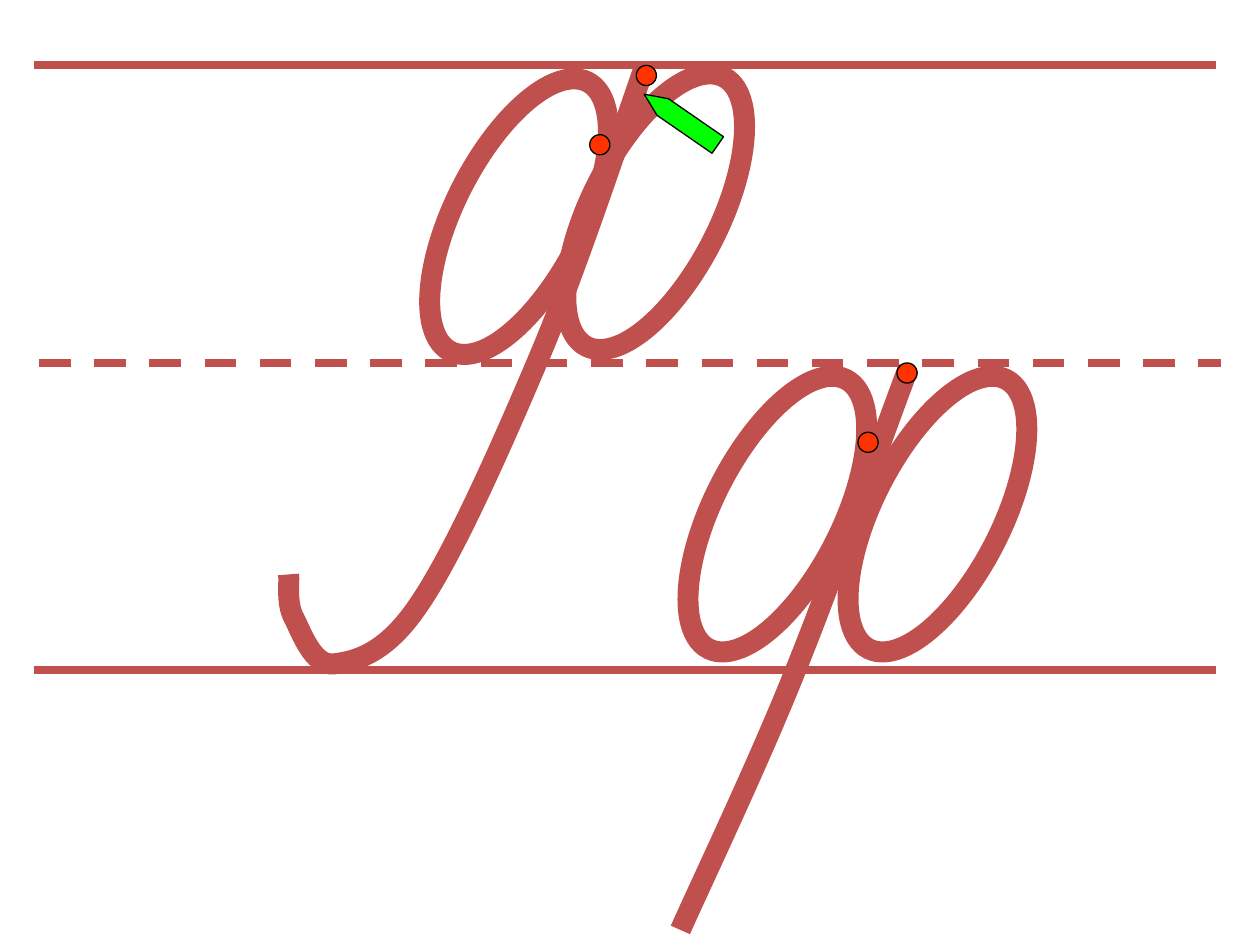
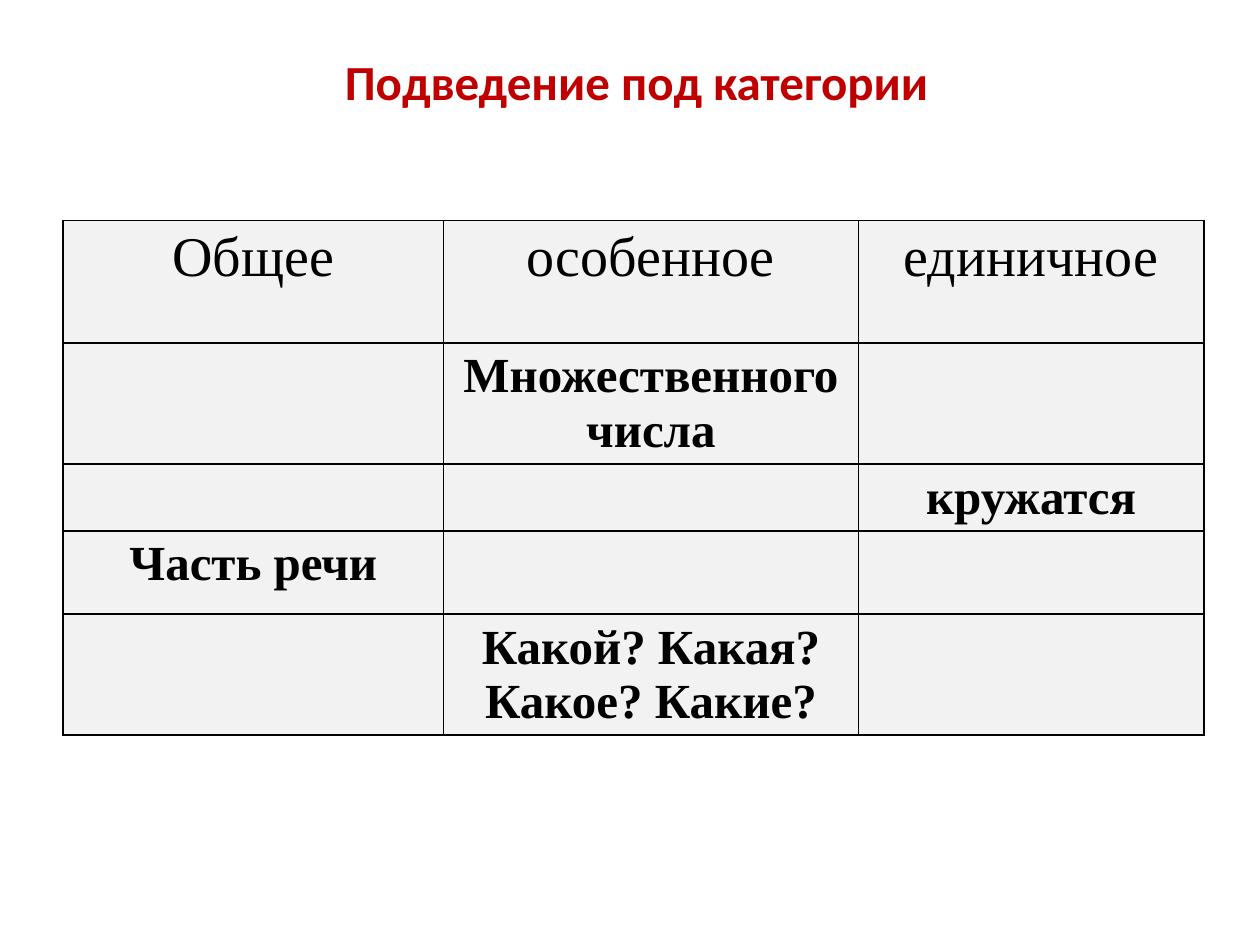
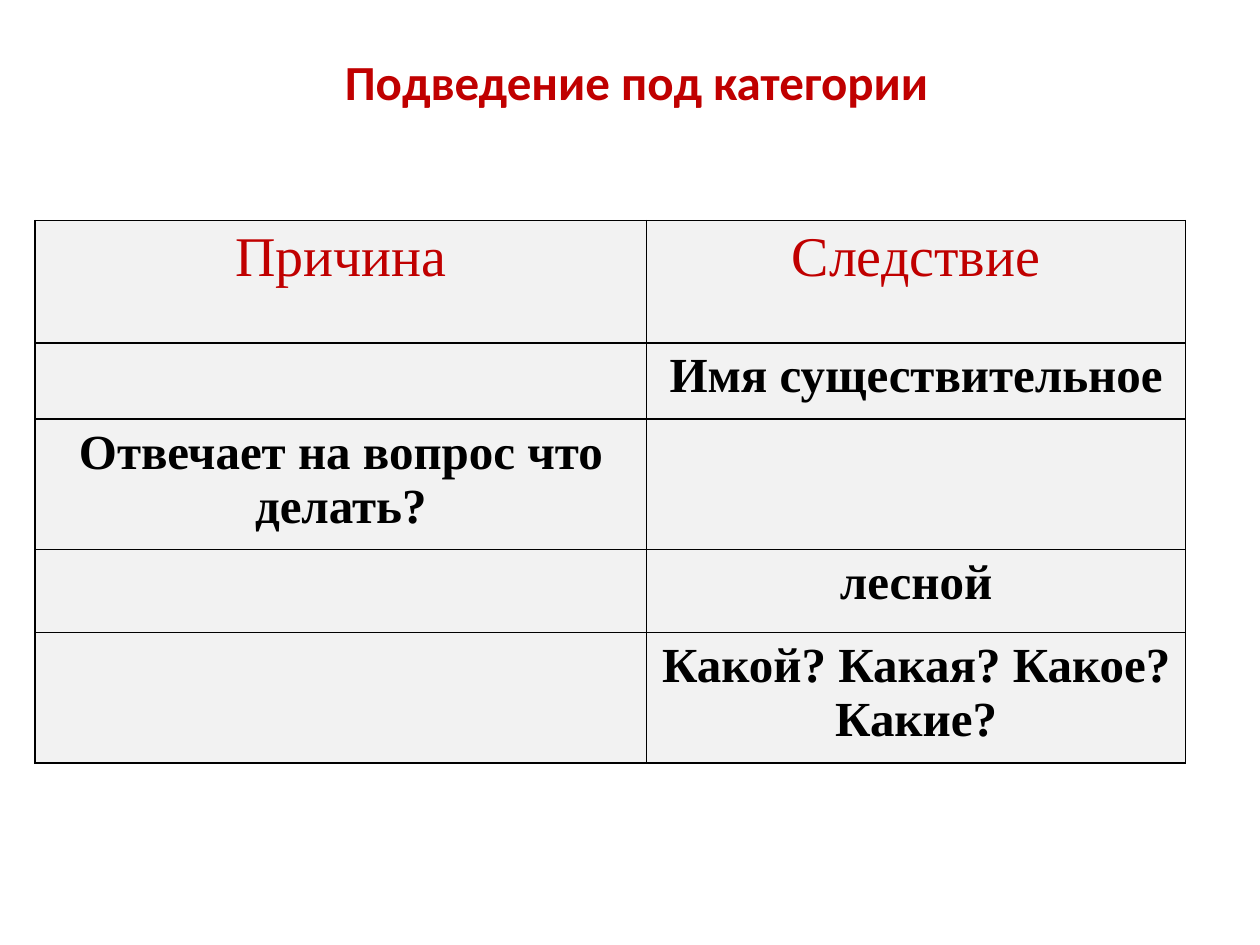
from dataclasses import dataclass

from lxml.etree import SubElement
from pptx import Presentation
from pptx.dml.color import RGBColor
from pptx.enum.dml import MSO_LINE
from pptx.enum.shapes import MSO_CONNECTOR, MSO_SHAPE
from pptx.enum.text import MSO_AUTO_SIZE, PP_ALIGN
from pptx.oxml.ns import qn
from pptx.util import Pt


@dataclass(frozen=True)
class Theme:
    ink: str = "C0504D"
    dot: str = "FF3300"
    pencil: str = "00FF00"
    black: str = "000000"
    accent: str = "C00000"
    cell: str = "F2F2F2"
    title_font: str = "Calibri"
    table_font: str = "Times New Roman"
    title_size: float = 28
    head_size: float = 32
    body_size: float = 28
    stroke: float = 12
    ruler: float = 4.5
    outline: float = 0.75
    border: float = 1


T = Theme()

# Content: handwriting slide, all lengths in points
RULERS = [(19.4, 37.4, False), (22.3, 207.4, True), (19.4, 383, False)]
RULER_LENGTH = 675.4
OVAL_SIZE, OVAL_TILT = (73.4, 172.8), 27
OVALS = [(499, 207.4), (407.5, 207.4), (259.9, 37.4), (337.7, 34.6)]
DOT_SIZE = 11.5
DOTS = [(363.6, 37.4), (337, 77), (512.6, 207.4), (490.3, 247)]
PENCIL = (363.6, 62.6, 51.1, 11.5)
PENCIL_TILT, PENCIL_TIP = 214.6, 1.124
# Each stem is a start point, then two control points and an end per curve
STEMS = [
    [(388.8, 531.4),
     (399.6, 506.9), (432.7, 437.8), (454.3, 383.8),
     (475.9, 330.5), (505.4, 246.2), (519.1, 210.2)],
    [(164.9, 328.3),
     (165.6, 332.6), (163.4, 344.2), (167.8, 352.8),
     (172.1, 360.7), (178.6, 380.9), (190.8, 379.4),
     (202.3, 378), (220.3, 374.4), (239.8, 344.9),
     (259.9, 315.4), (287.3, 253.4), (308.9, 202.3),
     (330.5, 151.2), (356.4, 72), (368.6, 37.4)],
]

# Content: table slides
TITLE = "Подведение под категории"
TITLE_BOX = (190, 26, 350, 41)
TABLE_TOP = 126
TABLES = [
    dict(left=36, cols=[217.5, 237, 197.5], heights=[70, 69, 38, 47.5, 69],
         head_color=T.black,
         rows=[["Общее", "особенное", "единичное"],
               ["", "Множественного числа", ""],
               ["", "", "кружатся"],
               ["Часть речи", "", ""],
               ["", "Какой? Какая? Какое? Какие?", ""]]),
    dict(left=20, cols=[349.5, 308], heights=[70, 43.5, 74.5, 47.5, 74.5],
         head_color=T.accent,
         rows=[["Причина", "Следствие"],
               ["", "Имя существительное"],
               ["Отвечает на вопрос что делать?", ""],
               ["", "лесной"],
               ["", "Какой? Какая? Какое? Какие?"]]),
]


def rgb(color):
    return RGBColor.from_string(color)


def pts(*values):
    return [Pt(v) for v in values]


def write(tf, text, *, font, size, color, bold=False, align=PP_ALIGN.LEFT):
    p = tf.paragraphs[0]
    p.alignment = align
    r = p.add_run()
    r.text = text
    r.font.name, r.font.size, r.font.bold = font, Pt(size), bold
    r.font.color.rgb = rgb(color)


def paint(sp, *, line, width, fill=None):
    sp.shadow.inherit = False
    if fill:
        sp.fill.solid()
        sp.fill.fore_color.rgb = rgb(fill)
    else:
        sp.fill.background()
    sp.line.color.rgb = rgb(line)
    sp.line.width = Pt(width)


def add_preset(s, kind, box, rotation=0, **look):
    sp = s.shapes.add_shape(kind, *pts(*box))
    sp.rotation = rotation
    paint(sp, **look)
    return sp


def add_rulers(s):
    group = s.shapes.add_group_shape()
    for x, y, dashed in RULERS:
        c = group.shapes.add_connector(
            MSO_CONNECTOR.STRAIGHT, *pts(x, y, x + RULER_LENGTH, y))
        c.line.color.rgb = rgb(T.ink)
        c.line.width = Pt(T.ruler)
        if dashed:
            c.line.dash_style = MSO_LINE.DASH
        SubElement(c._element.spPr, qn("a:effectLst"))


def add_stem(s, points):
    start, *rest = [pts(*point) for point in points]
    builder = s.shapes.build_freeform(*start)
    builder.add_line_segments(rest, close=False)
    sp = builder.convert_to_shape()
    paint(sp, line=T.ink, width=T.stroke)
    # Join every three line points into one cubic curve
    path = sp._element.find(".//" + qn("a:path"))
    segments = path.findall(qn("a:lnTo"))
    for i in range(0, len(segments), 3):
        curve = SubElement(path, qn("a:cubicBezTo"))
        for segment in segments[i:i + 3]:
            curve.append(segment[0])
            path.remove(segment)


def add_border(cell):
    tc_pr = cell._tc.get_or_add_tcPr()
    for side in ("lnL", "lnR", "lnT", "lnB"):
        ln = SubElement(tc_pr, qn("a:" + side), w=str(Pt(T.border)))
        fill = SubElement(ln, qn("a:solidFill"))
        SubElement(fill, qn("a:srgbClr"), val=T.black)


def add_grid(s, left, cols, heights, head_color, rows):
    frame = s.shapes.add_table(
        len(rows), len(cols), *pts(left, TABLE_TOP, sum(cols), sum(heights)))
    table = frame.table
    table.first_row = table.horz_banding = False
    for column, width in zip(table.columns, cols):
        column.width = Pt(width)
    for i, (row, height) in enumerate(zip(rows, heights)):
        table.rows[i].height = Pt(height)
        head = i == 0
        for j, text in enumerate(row):
            cell = table.cell(i, j)
            add_border(cell)
            cell.fill.solid()
            cell.fill.fore_color.rgb = rgb(T.cell)
            if text:
                write(cell.text_frame, text, font=T.table_font,
                      size=T.head_size if head else T.body_size,
                      color=head_color if head else T.black,
                      bold=not head, align=PP_ALIGN.CENTER)


def add_title(s):
    tf = s.shapes.add_textbox(*pts(*TITLE_BOX)).text_frame
    tf.word_wrap = False
    tf.auto_size = MSO_AUTO_SIZE.SHAPE_TO_FIT_TEXT
    write(tf, TITLE, font=T.title_font, size=T.title_size,
          color=T.accent, bold=True)


def add_handwriting(s):
    add_rulers(s)
    for points in STEMS:
        add_stem(s, points)
    for corner in OVALS:
        add_preset(s, MSO_SHAPE.OVAL, corner + OVAL_SIZE, OVAL_TILT,
                   line=T.ink, width=T.stroke)
    for corner in DOTS:
        add_preset(s, MSO_SHAPE.FLOWCHART_CONNECTOR,
                   corner + (DOT_SIZE, DOT_SIZE),
                   fill=T.dot, line=T.black, width=T.outline)
    pencil = add_preset(s, MSO_SHAPE.PENTAGON, PENCIL, PENCIL_TILT,
                        fill=T.pencil, line=T.black, width=T.outline)
    pencil.adjustments[0] = PENCIL_TIP


def main():
    prs = Presentation()
    prs.slide_width, prs.slide_height = pts(720, 540)
    blank = prs.slide_layouts[6]
    add_handwriting(prs.slides.add_slide(blank))
    for grid in TABLES:
        s = prs.slides.add_slide(blank)
        add_grid(s, **grid)
        add_title(s)
    prs.save("out.pptx")


if __name__ == "__main__":
    main()
